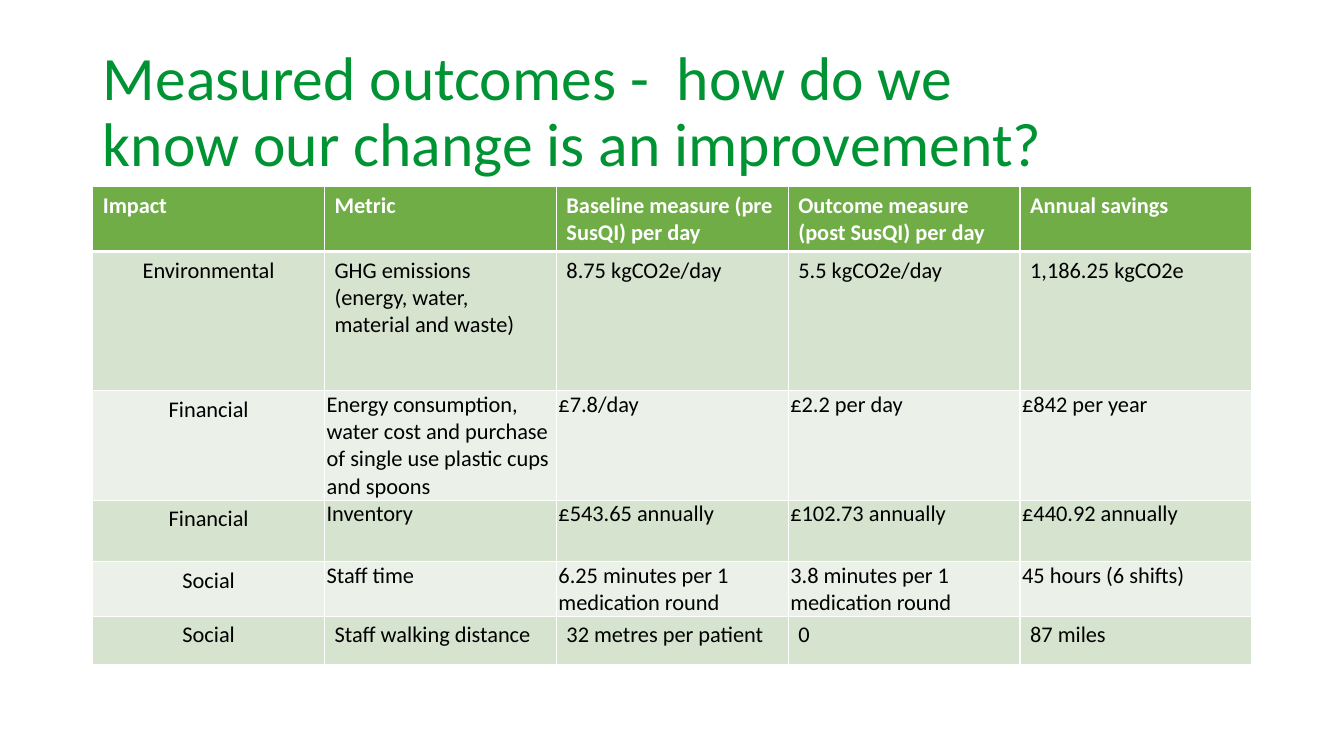
from lxml import etree
from pptx import Presentation, util as u
from pptx.dml.color import RGBColor
from pptx.enum import text
from pptx.oxml import ns

TITLE_GREEN = RGBColor(0x00, 0x93, 0x33)
HEADER_GREEN = RGBColor(0x70, 0xAD, 0x47)
DARK_BAND = RGBColor(0xD5, 0xE3, 0xCF)
LIGHT_BAND = RGBColor(0xEB, 0xF1, 0xE9)
WHITE = RGBColor(0xFF, 0xFF, 0xFF)
BLACK = RGBColor(0x00, 0x00, 0x00)

LEFT, WIDTH = u.Pt(66.24), u.Pt(828)
ROW_HEIGHTS = [39.6, 99.4, 73.4, 43.9, 31.7, 34.6]
TIGHT_ROWS = (2, 3, 4)
OUTCOMES = [
    ["Impact", "Metric", "Baseline measure (pre SusQI) per day",
     "Outcome measure (post SusQI) per day", "Annual savings"],
    ["Environmental", "GHG emissions (energy, water, material and waste)",
     "8.75 kgCO2e/day", "5.5 kgCO2e/day", "1,186.25 kgCO2e"],
    ["Financial", "Energy consumption, water cost and purchase of single use plastic cups and spoons",
     "£7.8/day", "£2.2 per day", "£842 per year"],
    ["Financial", "Inventory", "£543.65 annually", "£102.73 annually", "£440.92 annually"],
    ["Social", "Staff time", "6.25 minutes per 1 medication round",
     "3.8 minutes per 1 medication round", "45 hours (6 shifts)"],
    ["Social", "Staff walking distance", "32 metres per patient", "0", "87 miles"],
]


def set_values(target, values):
    for name, value in values.items():
        setattr(target, name, value)


def add_border(cell, side, width):
    properties = cell._tc.get_or_add_tcPr()
    line = etree.SubElement(properties, ns.qn(f"a:ln{side}"), w=str(u.Pt(width)))
    fill = etree.SubElement(line, ns.qn("a:solidFill"))
    etree.SubElement(fill, ns.qn("a:srgbClr"), val=str(WHITE))


presentation = Presentation()
set_values(presentation, {"slide_width": u.Pt(960), "slide_height": u.Pt(540)})
slide = presentation.slides.add_slide(presentation.slide_layouts[5])

# Title
title = slide.shapes.title
set_values(title, {"left": LEFT, "top": u.Pt(28.75), "width": WIDTH, "height": u.Pt(104.4)})
title.text_frame.text = "Measured outcomes -  how do we\vknow our change is an improvement?"
set_values(title.text_frame, {"auto_size": text.MSO_AUTO_SIZE.NONE, "word_wrap": True,
                              "vertical_anchor": text.MSO_ANCHOR.MIDDLE})
paragraph = title.text_frame.paragraphs[0]
set_values(paragraph, {"alignment": text.PP_ALIGN.LEFT, "line_spacing": 0.9})
set_values(paragraph.font, {"name": "Calibri", "size": u.Pt(44)})
paragraph.font.color.rgb = TITLE_GREEN

# Outcomes table
table = slide.shapes.add_table(len(OUTCOMES), len(OUTCOMES[0]), LEFT, u.Pt(133.4),
                               WIDTH, u.Pt(sum(ROW_HEIGHTS))).table
for row, height in zip(table.rows, ROW_HEIGHTS):
    row.height = u.Pt(height)

for row_index, values in enumerate(OUTCOMES):
    header = row_index == 0
    band = HEADER_GREEN if header else DARK_BAND if row_index % 2 else LIGHT_BAND
    for column_index, value in enumerate(values):
        cell = table.cell(row_index, column_index)
        cell.text = value
        if row_index in TIGHT_ROWS and column_index > 0:
            set_values(cell, {"margin_left": u.Pt(1.5), "margin_right": u.Pt(1.5),
                              "margin_top": 0, "margin_bottom": 0})

        # White grid with a heavier rule under the header
        for side in "LRTB":
            under_header = (row_index, side) in ((0, "B"), (1, "T"))
            add_border(cell, side, 3 if under_header else 1)
        cell.fill.solid()
        cell.fill.fore_color.rgb = band

        paragraph = cell.text_frame.paragraphs[0]
        centred = column_index == 0 and not header
        paragraph.alignment = text.PP_ALIGN.CENTER if centred else text.PP_ALIGN.LEFT
        set_values(paragraph.font, {"name": "Calibri", "size": u.Pt(16), "bold": header})
        paragraph.font.color.rgb = WHITE if header else BLACK

presentation.save("out.pptx")
